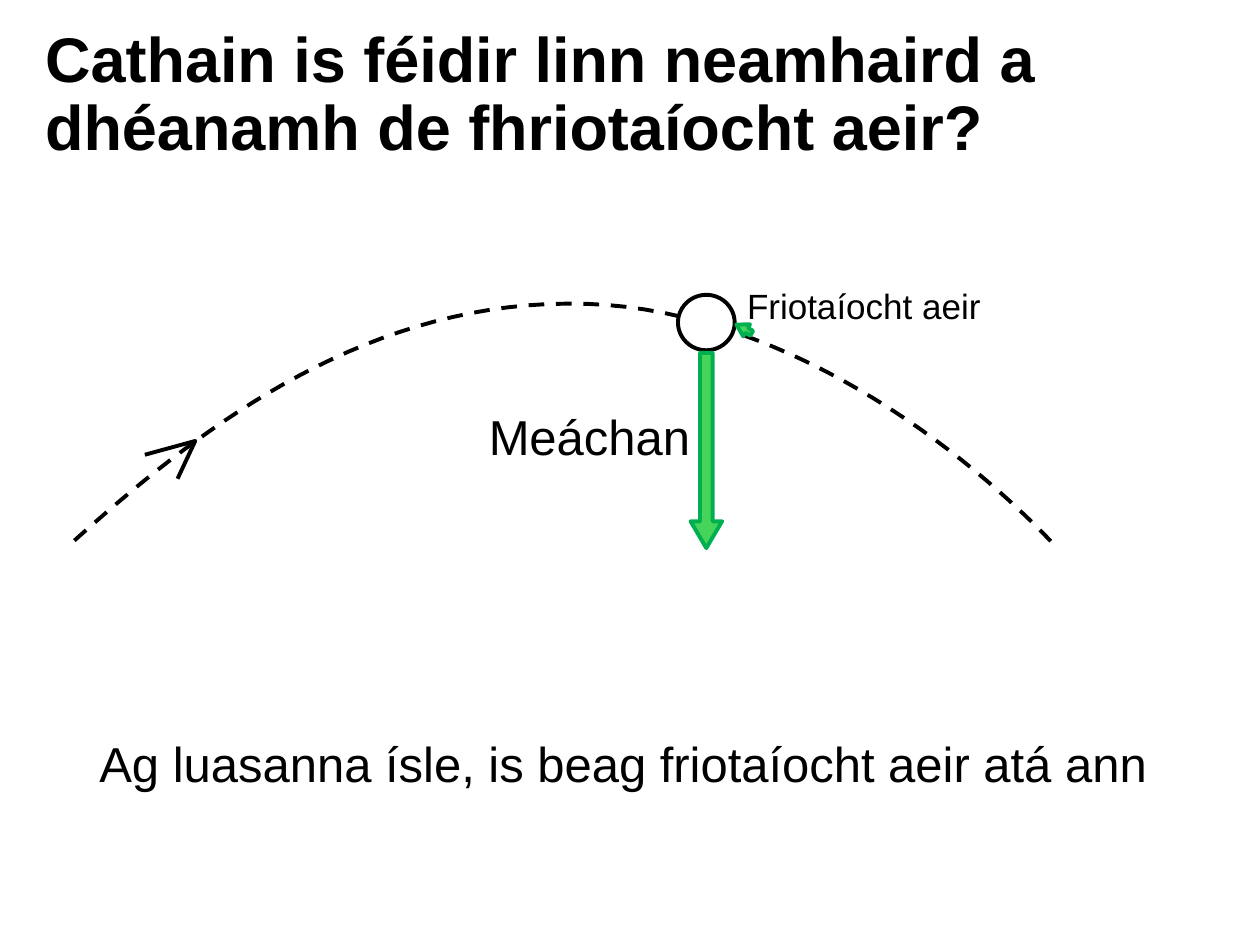
from dataclasses import dataclass

from pptx import Presentation
from pptx.dml.color import RGBColor
from pptx.enum.dml import MSO_LINE
from pptx.enum.shapes import MSO_SHAPE
from pptx.enum.text import MSO_ANCHOR
from pptx.util import Pt

Point = tuple[float, float]


@dataclass(frozen=True)
class Theme:
    font: str = "Arial"
    ink: str = "000000"
    paper: str = "FFFFFF"
    force_fill: str = "47D45A"
    force_line: str = "00B050"
    line_width: float = 2.25
    title_size: float = 36
    label_size: float = 28
    small_size: float = 20


THEME = Theme()


@dataclass(frozen=True)
class Box:
    left: float
    top: float
    width: float
    height: float

    def emu(self):
        return Pt(self.left), Pt(self.top), Pt(self.width), Pt(self.height)


@dataclass(frozen=True)
class Label:
    text: str
    box: Box
    size: float = THEME.label_size
    bold: bool = False
    wrap: bool = False
    anchor: MSO_ANCHOR = MSO_ANCHOR.TOP
    line_spacing: float = 1.0
    space_after: float = 12


@dataclass(frozen=True)
class Body:
    kind: MSO_SHAPE
    box: Box
    fill: str
    line: str
    rotation: float = 0
    adjustments: tuple[float, ...] = ()


ARROW_SHAPE = (0.4, 0.85)

LABELS = [
    Label("Cathain is féidir linn neamhaird a dhéanamh de fhriotaíocht aeir?",
          Box(18.7, 12.2, 686.9, 85.7), THEME.title_size, bold=True, wrap=True,
          anchor=MSO_ANCHOR.MIDDLE, line_spacing=0.9, space_after=0),
    Label("Meáchan", Box(272.2, 229, 131, 41)),
    Label("Friotaíocht aeir", Box(419.8, 159.1, 149, 31.7), THEME.small_size),
    Label("Ag luasanna ísle, is beag friotaíocht aeir atá ann",
          Box(49.7, 415.4, 620.6, 41)),
]

BODIES = [
    Body(MSO_SHAPE.OVAL, Box(387.4, 168.5, 32.4, 31.7), THEME.paper, THEME.ink),
    Body(MSO_SHAPE.DOWN_ARROW, Box(394.6, 201.6, 18, 111.6),
         THEME.force_fill, THEME.force_line, adjustments=ARROW_SHAPE),
    Body(MSO_SHAPE.DOWN_ARROW, Box(421.2, 182.9, 7.9, 10.1),
         THEME.force_fill, THEME.force_line, 119.5, ARROW_SHAPE),
]

RISE = [(42.5, 308.9), (108.7, 249.8), (202.3, 174.2), (324, 173.5)]
FALL = [(324, 173.5), (445, 172.1), (554.4, 259.2), (604.8, 313.9)]
DIRECTION_HEAD = [(82.8, 259.9), (111.6, 252), (101.5, 273.6)]


def bezier(controls: list[Point], steps: int = 32) -> list[Point]:
    points = []
    for i in range(steps + 1):
        t = i / steps
        weights = ((1 - t) ** 3, 3 * t * (1 - t) ** 2, 3 * t ** 2 * (1 - t), t ** 3)
        points.append((sum(w * x for w, (x, _) in zip(weights, controls)),
                       sum(w * y for w, (_, y) in zip(weights, controls))))
    return points


def style_line(sp, color: str) -> None:
    sp.shadow.inherit = False
    sp.line.color.rgb = RGBColor.from_string(color)
    sp.line.width = Pt(THEME.line_width)


def draw_path(s, points: list[Point], dashed: bool = False) -> None:
    start, *rest = [(Pt(x), Pt(y)) for x, y in points]
    builder = s.shapes.build_freeform(*start)
    builder.add_line_segments(rest, close=False)
    sp = builder.convert_to_shape()
    sp.fill.background()
    style_line(sp, THEME.ink)
    if dashed:
        sp.line.dash_style = MSO_LINE.DASH


def draw_body(s, body: Body) -> None:
    sp = s.shapes.add_shape(body.kind, *body.box.emu())
    sp.rotation = body.rotation
    for i, value in enumerate(body.adjustments):
        sp.adjustments[i] = value
    sp.fill.solid()
    sp.fill.fore_color.rgb = RGBColor.from_string(body.fill)
    style_line(sp, body.line)


def draw_label(s, label: Label) -> None:
    tf = s.shapes.add_textbox(*label.box.emu()).text_frame
    tf.word_wrap = label.wrap
    tf.vertical_anchor = label.anchor
    tf.text = label.text
    p = tf.paragraphs[0]
    p.line_spacing = label.line_spacing
    p.space_after = Pt(label.space_after)
    r = p.runs[0]
    r.font.name = THEME.font
    r.font.size = Pt(label.size)
    r.font.bold = label.bold
    r.font.color.rgb = RGBColor.from_string(THEME.ink)


def main() -> None:
    prs = Presentation()
    prs.slide_width, prs.slide_height = Pt(720), Pt(540)
    s = prs.slides.add_slide(prs.slide_layouts[6])
    draw_path(s, bezier(RISE) + bezier(FALL)[1:], dashed=True)
    for body in BODIES:
        draw_body(s, body)
    for label in LABELS:
        draw_label(s, label)
    draw_path(s, DIRECTION_HEAD)
    prs.save("out.pptx")


if __name__ == "__main__":
    main()
